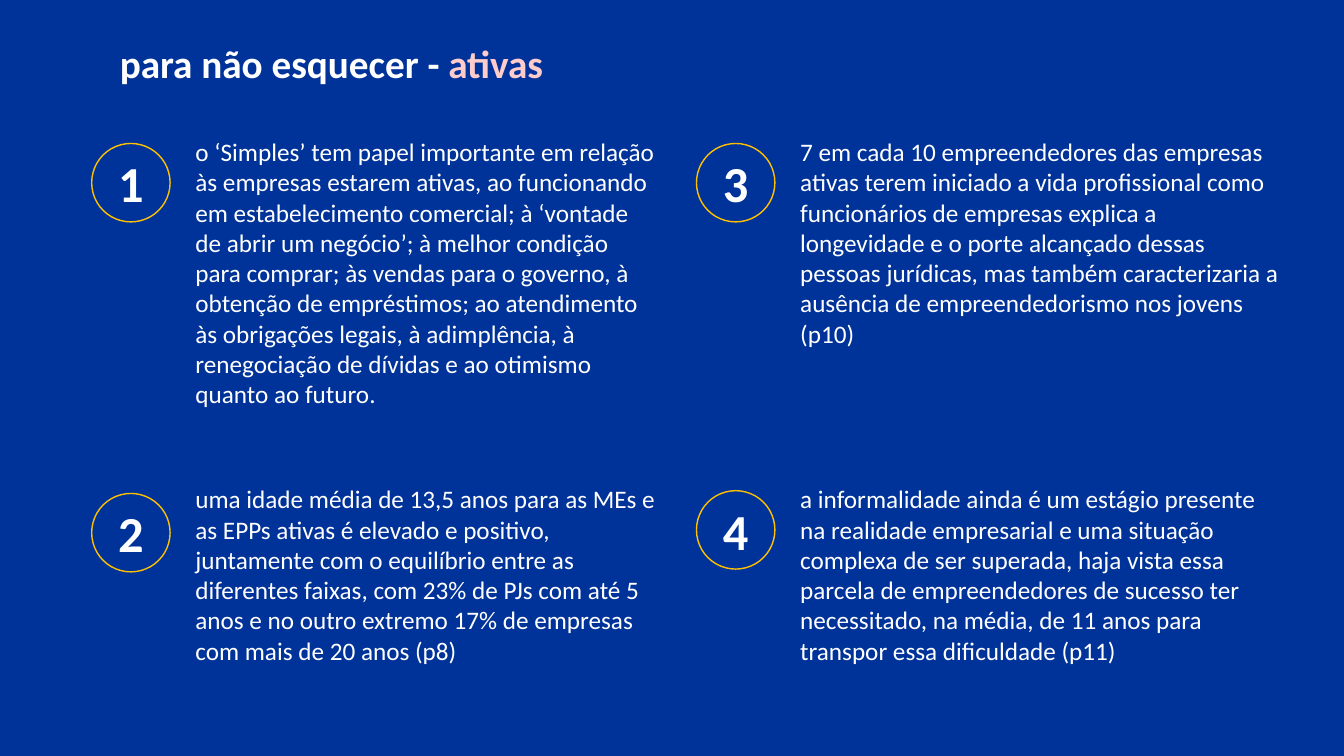
import dataclasses

import pptx
import pptx.dml.color
import pptx.enum.shapes
import pptx.enum.text
import pptx.util


@dataclasses.dataclass(frozen=True)
class Theme:
    font: str = "Calibri"
    background: str = "003399"
    text: str = "FFFFFF"
    accent: str = "FFCCCC"
    ring: str = "FFC000"
    title_size: int = 28
    number_size: int = 36
    body_size: int = 18
    ring_width: int = 1


class SlideBuilder:
    """Draws styled elements on the current slide, measured in px."""

    SCALE = 6350

    def __init__(self, theme, width, height):
        self.theme = theme
        self.deck = pptx.Presentation()
        self.deck.slide_width = self.emu(width)
        self.deck.slide_height = self.emu(height)
        self.slide = self.deck.slides.add_slide(self.deck.slide_layouts[6])

    def emu(self, px):
        return pptx.util.Emu(px * self.SCALE)

    def color(self, value):
        return pptx.dml.color.RGBColor.from_string(value)

    def format_run(self, run, size, color, bold=False):
        run.font.name = self.theme.font
        run.font.size = pptx.util.Pt(size)
        run.font.bold = bold
        run.font.color.rgb = self.color(color)

    def shape(self, kind, left, top, width, height):
        shape = self.slide.shapes.add_shape(kind, *map(self.emu, (left, top, width, height)))
        shape.shadow.inherit = False
        return shape

    def text_box(self, left, top, width, height):
        box = self.slide.shapes.add_textbox(*map(self.emu, (left, top, width, height)))
        box.text_frame.word_wrap = True
        box.text_frame.auto_size = pptx.enum.text.MSO_AUTO_SIZE.SHAPE_TO_FIT_TEXT
        return box.text_frame

    def panel(self, left, top, width, height):
        panel = self.shape(pptx.enum.shapes.MSO_SHAPE.RECTANGLE, left, top, width, height)
        panel.fill.solid()
        panel.fill.fore_color.rgb = self.color(self.theme.background)
        panel.line.fill.background()

    def title(self, left, top, width, height, lead, highlight):
        heading = self.text_box(left, top, width, height).paragraphs[0]
        for words, color in ((lead, self.theme.text), (highlight, self.theme.accent)):
            run = heading.add_run()
            run.text = words
            self.format_run(run, self.theme.title_size, color, bold=True)

    def body(self, left, top, width, height, words):
        frame = self.text_box(left, top, width, height)
        frame.text = words
        self.format_run(frame.paragraphs[0].runs[0], self.theme.body_size, self.theme.text)

    def number(self, left, top, diameter, value):
        ring = self.shape(pptx.enum.shapes.MSO_SHAPE.OVAL, left, top, diameter, diameter)
        ring.fill.background()
        ring.line.color.rgb = self.color(self.theme.ring)
        ring.line.width = pptx.util.Pt(self.theme.ring_width)
        frame = ring.text_frame
        frame.text = str(value)
        frame.vertical_anchor = pptx.enum.text.MSO_ANCHOR.MIDDLE
        digit = frame.paragraphs[0]
        digit.alignment = pptx.enum.text.PP_ALIGN.CENTER
        self.format_run(digit.runs[0], self.theme.number_size, self.theme.text, bold=True)

    def save(self):
        self.deck.save("out.pptx")


WIDTH, HEIGHT = 1920, 1080
NUMBER_LEFT, BODY_LEFT, COLUMN_STEP = 131, 265, 864
BODY_TOPS = (188, 684)
BODY_WIDTHS = (687, 716)
DIAMETER = 112

REMINDERS = (
    (205, 408, "o ‘Simples’ tem papel importante em relação às empresas estarem ativas, "
     "ao funcionando em estabelecimento comercial; à ‘vontade de abrir um negócio’; "
     "à melhor condição para comprar; às vendas para o governo, à obtenção de empréstimos; "
     "ao atendimento às obrigações legais, à adimplência, à renegociação de dívidas "
     "e ao otimismo quanto ao futuro."),
    (705, 276, "uma idade média de 13,5 anos para as MEs e as EPPs ativas é elevado e positivo, "
     "juntamente com o equilíbrio entre as diferentes faixas, com 23% de PJs com até 5 anos "
     "e no outro extremo 17% de empresas com mais de 20 anos (p8)"),
    (205, 363, "7 em cada 10 empreendedores das empresas ativas terem iniciado a vida profissional "
     "como funcionários de empresas explica a longevidade e o porte alcançado dessas pessoas "
     "jurídicas, mas também caracterizaria a ausência de empreendedorismo nos jovens (p10)"),
    (701, 320, "a informalidade ainda é um estágio presente na realidade empresarial e uma situação "
     "complexa de ser superada, haja vista essa parcela de empreendedores de sucesso ter "
     "necessitado, na média, de 11 anos para transpor essa dificuldade (p11)"),
)


def main():
    builder = SlideBuilder(Theme(), WIDTH, HEIGHT)
    builder.panel(0, 0, WIDTH, HEIGHT)
    for index, (number_top, body_height, words) in enumerate(REMINDERS):
        column, row = divmod(index, 2)
        offset = column * COLUMN_STEP
        builder.body(BODY_LEFT + offset, BODY_TOPS[row], BODY_WIDTHS[column], body_height, words)
        builder.number(NUMBER_LEFT + offset, number_top, DIAMETER, index + 1)
    builder.title(157, 49, 924, 82, "para não esquecer - ", "ativas")
    builder.save()


if __name__ == "__main__":
    main()
